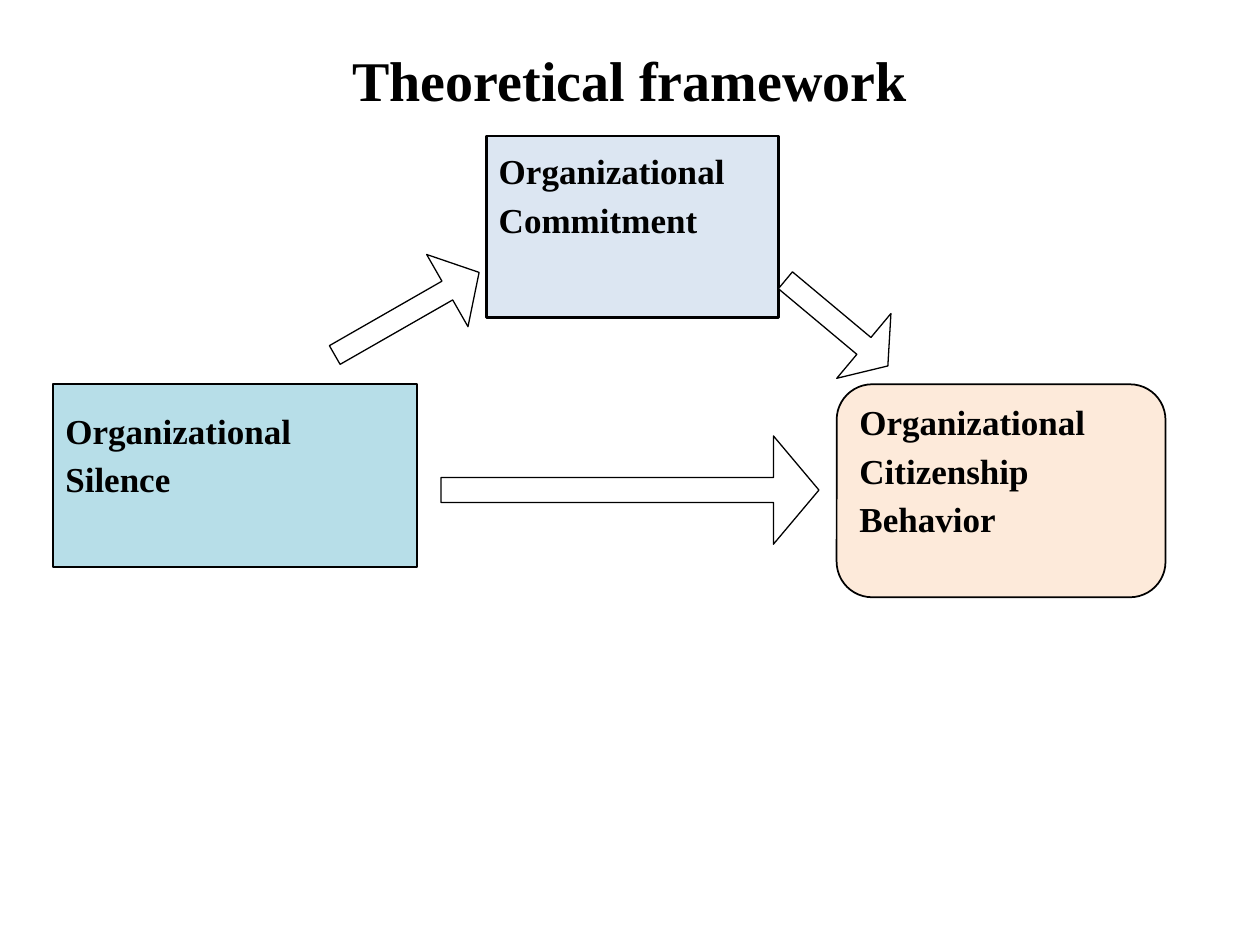
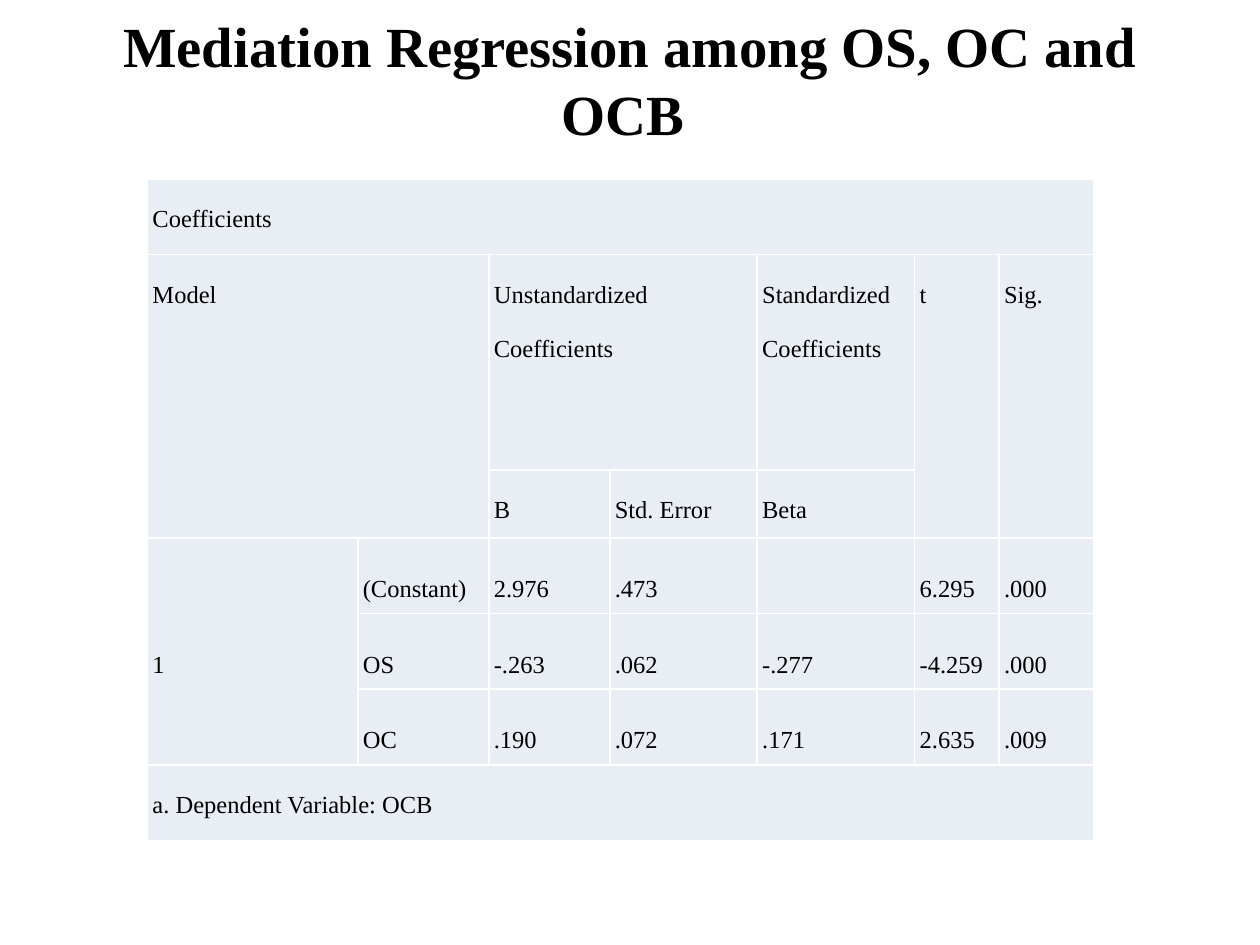
"""Builds two slides: a theoretical framework diagram and a regression table."""
from dataclasses import dataclass
from typing import Any, NamedTuple

from lxml.etree import SubElement
from pptx import Presentation
from pptx.dml.color import RGBColor
from pptx.enum.shapes import MSO_SHAPE
from pptx.enum.text import MSO_ANCHOR, PP_ALIGN
from pptx.oxml.ns import qn
from pptx.util import Inches, Pt


@dataclass(frozen=True)
class Theme:
    font: str = "Times New Roman"
    ink: str = "000000"
    white: str = "FFFFFF"
    silence: str = "B7DEE8"
    commitment: str = "DCE6F2"
    behavior: str = "FDEADA"
    cell: str = "E9EDF4"
    title_size: float = 32
    long_title_size: float = 32.4
    box_size: float = 20
    table_size: float = 14


THEME = Theme()


class Area(NamedTuple):
    left: float
    top: float
    width: float
    height: float


class Concept(NamedTuple):
    text: str
    area: Area
    fill: str
    line: float
    inset: float
    kind: Any = MSO_SHAPE.RECTANGLE


class Arrow(NamedTuple):
    area: Area
    rotation: float
    shaft: float
    head: float


class Merge(NamedTuple):
    row: int
    column: int
    last_row: int
    last_column: int


TITLE_AREA = Area(0.5, 0, 9, 1.25)
TABLE_AREA = Area(1.17, 1.42, 8.5 - 1, 5.25)
CONCEPTS = (
    Concept("Organizational Silence", Area(0.42, 3.05, 2.89, 1.45), THEME.silence, 1, 0.15),
    Concept("Organizational Commitment", Area(3.86, 1.08, 2.32, 1.44), THEME.commitment, 1.5, 0.06),
    Concept("Organizational Citizenship Behavior", Area(6.64, 3.05, 2.61, 1.69),
            THEME.behavior, 1, 0, MSO_SHAPE.ROUNDED_RECTANGLE),
)
ARROWS = (
    Arrow(Area(2.57, 2.16, 1.32, 0.66), 330.2, 0.26, 0.44),
    Arrow(Area(3.5, 3.46, 3, 0.86), 0, 0.23, 0.42),
    Arrow(Area(6.11, 2.23, 1.06, 0.67), 39.9, 0.26, 0.37),
)
COLUMN_WIDTHS = (1.67, 1.04, 0.96, 1.17, 1.25, 0.67, 0.75)
ROW_HEIGHTS = (0.6, 1.71, 0.54, 0.6, 0.6, 0.6, 0.6)
MODEL_ROWS = range(3, 6)
CELLS = (
    ("Coefficients",),
    ("Model", "", "Unstandardized Coefficients", "", "Standardized Coefficients", "t", "Sig."),
    ("", "", "B", "Std. Error", "Beta"),
    ("1", "(Constant)", "2.976", ".473", "", "6.295", ".000"),
    ("", "OS", "-.263", ".062", "-.277", "-4.259", ".000"),
    ("", "OC", ".190", ".072", ".171", "2.635", ".009"),
    ("a. Dependent Variable: OCB",),
)
MERGES = (
    Merge(0, 0, 0, 6), Merge(1, 0, 2, 1), Merge(1, 2, 1, 3), Merge(1, 5, 2, 5),
    Merge(1, 6, 2, 6), Merge(3, 0, 5, 0), Merge(6, 0, 6, 6),
)


def apply_format(target: Any, values: dict[str, Any]) -> None:
    """Set each named value on the target."""
    for name, value in values.items():
        setattr(target, name, value)


def inches(area: Area) -> list[int]:
    """Convert an area to lengths."""
    return [Inches(length) for length in area]


def write(frame: Any, text: str, size: float, bold: bool, layout: dict[str, Any]) -> None:
    """Put one formatted paragraph in a text frame."""
    para = frame.paragraphs[0]
    apply_format(para, layout)
    if text:
        span = para.add_run()
        span.text = text
        apply_format(span.font, {"name": THEME.font, "size": Pt(size), "bold": bold})
        span.font.color.rgb = RGBColor.from_string(THEME.ink)
    else:
        para.font.size = Pt(size)


def add_title(page: Any, text: str, size: float) -> None:
    """Add the centred slide title."""
    frame = page.shapes.add_textbox(*inches(TITLE_AREA)).text_frame
    apply_format(frame, {"word_wrap": True, "vertical_anchor": MSO_ANCHOR.MIDDLE})
    write(frame, text, size, True, {"alignment": PP_ALIGN.CENTER})


def add_outlined(page: Any, kind: Any, area: Area, fill: str, line: float) -> Any:
    """Add a filled shape with a dark outline."""
    shape = page.shapes.add_shape(kind, *inches(area))
    shape.shadow.inherit = False
    shape.fill.solid()
    shape.fill.fore_color.rgb = RGBColor.from_string(fill)
    shape.line.color.rgb = RGBColor.from_string(THEME.ink)
    shape.line.width = Pt(line)
    return shape


def add_concept(page: Any, concept: Concept) -> None:
    """Add a labelled concept box."""
    box = add_outlined(page, concept.kind, concept.area, concept.fill, concept.line)
    apply_format(box.text_frame, {
        "word_wrap": True, "vertical_anchor": MSO_ANCHOR.TOP,
        "margin_top": Inches(concept.inset), "margin_right": Inches(0.3),
    })
    write(box.text_frame, concept.text, THEME.box_size, True,
          {"alignment": PP_ALIGN.LEFT, "line_spacing": 1.15})


def add_arrow(page: Any, arrow: Arrow) -> None:
    """Add a block arrow between concepts."""
    shape = add_outlined(page, MSO_SHAPE.RIGHT_ARROW, arrow.area, THEME.white, 0.75)
    shape.rotation = arrow.rotation
    shape.adjustments[0] = arrow.shaft
    shape.adjustments[1] = arrow.head


def add_borders(cell: Any) -> None:
    """Draw white lines on all four sides of a cell."""
    properties = cell._tc.get_or_add_tcPr()
    for position, side in enumerate(("a:lnL", "a:lnR", "a:lnT", "a:lnB")):
        line = SubElement(properties, qn(side), w=str(Pt(1)))
        SubElement(SubElement(line, qn("a:solidFill")), qn("a:srgbClr"), val=THEME.white)
        properties.insert(position, line)


def format_cell(cell: Any, text: str, anchor: Any) -> None:
    """Fill, border and label one table cell."""
    apply_format(cell, {
        "margin_left": Inches(0.04), "margin_right": 0, "margin_top": 0,
        "margin_bottom": 0, "vertical_anchor": anchor,
    })
    cell.fill.solid()
    cell.fill.fore_color.rgb = RGBColor.from_string(THEME.cell)
    add_borders(cell)
    layout = {"alignment": PP_ALIGN.JUSTIFY}
    if text:
        layout |= {"line_spacing": 2.0, "space_before": Pt(6), "space_after": Pt(12)}
    write(cell.text_frame, text, THEME.table_size, False, layout)


def add_coefficients(page: Any) -> None:
    """Add the regression coefficients table."""
    table = page.shapes.add_table(len(ROW_HEIGHTS), len(COLUMN_WIDTHS), *inches(TABLE_AREA)).table
    apply_format(table, {"first_row": False, "horz_banding": False})
    for column, width in zip(table.columns, COLUMN_WIDTHS):
        column.width = Inches(width)
    for row, height in zip(table.rows, ROW_HEIGHTS):
        row.height = Inches(height)
    for row, texts in enumerate(CELLS):
        anchor = MSO_ANCHOR.MIDDLE if row in MODEL_ROWS else MSO_ANCHOR.TOP
        for column in range(len(COLUMN_WIDTHS)):
            text = texts[column] if column < len(texts) else ""
            format_cell(table.cell(row, column), text, anchor)
    for merge in MERGES:
        table.cell(merge.row, merge.column).merge(table.cell(merge.last_row, merge.last_column))


def main() -> None:
    """Build and save the deck."""
    deck = Presentation()
    apply_format(deck, {"slide_width": Inches(10), "slide_height": Inches(7.5)})
    blank = deck.slide_layouts[6]

    framework = deck.slides.add_slide(blank)
    add_title(framework, "Theoretical framework", THEME.title_size)
    for concept in CONCEPTS:
        add_concept(framework, concept)
    for arrow in ARROWS:
        add_arrow(framework, arrow)

    regression = deck.slides.add_slide(blank)
    add_title(regression, "Mediation Regression among OS, OC and OCB ", THEME.long_title_size)
    add_coefficients(regression)

    deck.save("out.pptx")


if __name__ == "__main__":
    main()
